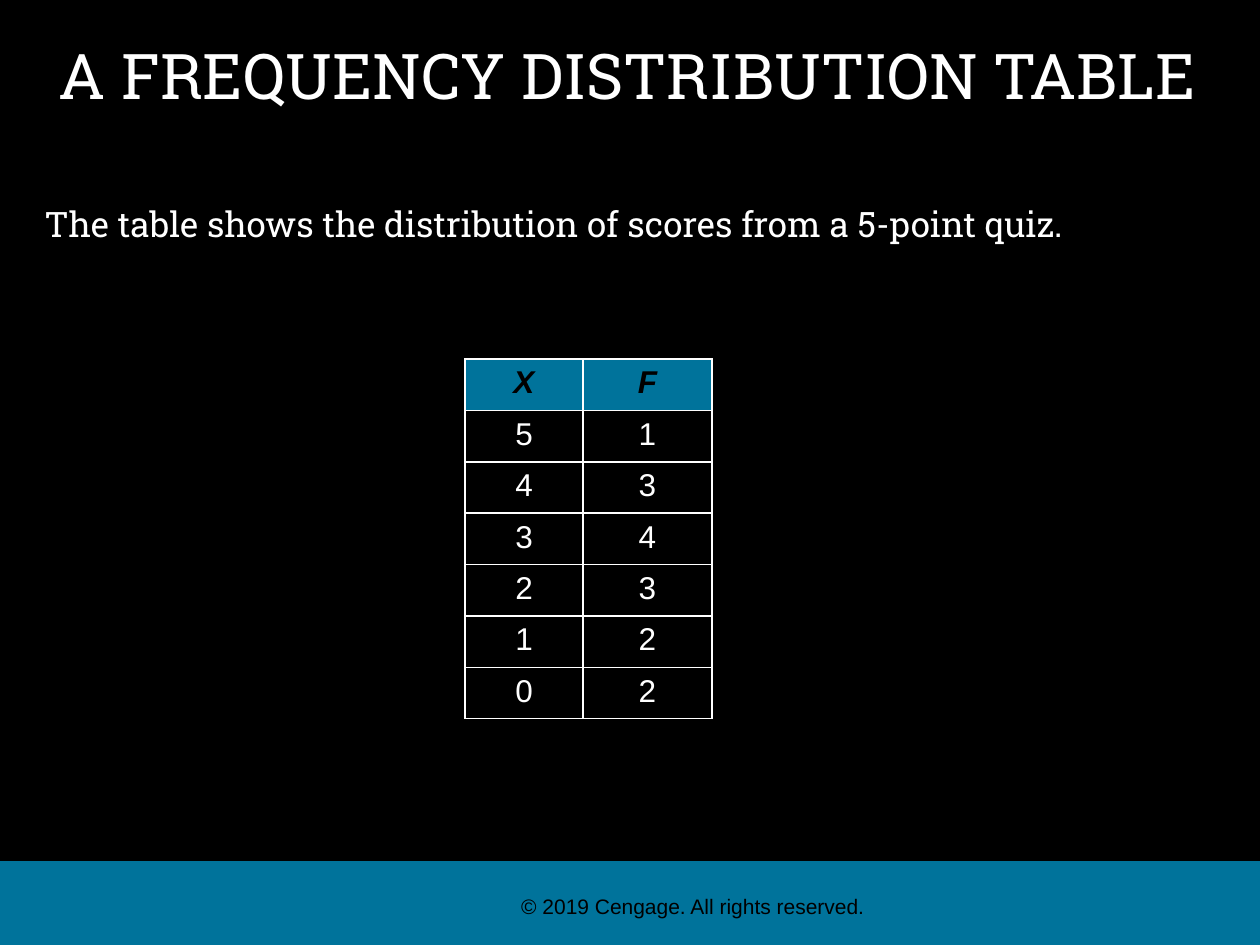
from lxml.etree import SubElement
from pptx import Presentation
from pptx.dml.color import RGBColor
from pptx.enum.shapes import MSO_SHAPE
from pptx.enum.text import MSO_ANCHOR, MSO_AUTO_SIZE, PP_ALIGN
from pptx.oxml.ns import qn
from pptx.util import Emu, Pt

COLORS = {"black": "000000", "blue": "00739B", "white": "FFFFFF"}
SCORES = [("X", "F"), (5, 1), (4, 3), (3, 4), (2, 3), (1, 2), (0, 2)]
COLUMN_WIDTHS = (118, 129)


def px(count):
    """Turn pixels into EMU."""
    return Emu(round(count * 914400 / 126))


def color(name):
    """Look up a named colour."""
    return RGBColor.from_string(COLORS[name])


def place(item, box):
    """Move an item into a left, top, width, height box."""
    item.left, item.top, item.width, item.height = map(px, box)


def write(para, text, font, size, ink, align=PP_ALIGN.CENTER, strong=False):
    """Add one formatted run to a paragraph."""
    para.alignment = align
    span = para.add_run()
    span.text = str(text)
    span.font.name, span.font.size = font, Pt(size)
    span.font.bold = span.font.italic = strong
    span.font.color.rgb = color(ink)


def add_bar(page, box):
    """Add a plain blue rectangle."""
    bar = page.shapes.add_shape(MSO_SHAPE.RECTANGLE, *map(px, box))
    bar.shadow.inherit = False
    bar.fill.solid()
    bar.fill.fore_color.rgb = color("blue")
    bar.line.fill.background()
    return bar


def add_footer(page, box):
    """Add the footer band and its copyright line."""
    left, top, width, height = box
    add_bar(page, box)
    frame = add_bar(page, (left + 211, top + 21, 966, 48)).text_frame
    frame.margin_left = frame.margin_right = 0
    frame.margin_top = frame.margin_bottom = 0
    frame.vertical_anchor = MSO_ANCHOR.MIDDLE
    write(frame.paragraphs[0], "© 2019 Cengage. All rights reserved.", "Arial", 12, "black")


def fill_title(page, box):
    """Fill the title placeholder."""
    title = page.shapes.title
    place(title, box)
    frame = title.text_frame
    frame.auto_size = MSO_AUTO_SIZE.NONE
    frame.vertical_anchor = MSO_ANCHOR.MIDDLE
    para = frame.paragraphs[0]
    para.line_spacing = 0.9
    write(para, "A FREQUENCY DISTRIBUTION TABLE", "Roboto Slab", 36, "white")


def fill_body(page, box):
    """Fill the body placeholder with one unbulleted line."""
    body = page.placeholders[1]
    place(body, box)
    body.text_frame.auto_size = MSO_AUTO_SIZE.NONE
    para = body.text_frame.paragraphs[0]
    properties = para._p.get_or_add_pPr()
    properties.set("marL", "0")
    properties.set("indent", "0")
    SubElement(properties, qn("a:buNone"))
    para.line_spacing, para.space_before = 1.2, Pt(0)
    write(para, "The table shows the distribution of scores from a 5-point quiz.",
          "Roboto Slab", 20, "white", PP_ALIGN.LEFT)


def add_borders(cell):
    """Draw a thin white border on each side of a cell."""
    properties = cell._tc.get_or_add_tcPr()
    for index, side in enumerate(("lnL", "lnR", "lnT", "lnB")):
        line = properties.makeelement(qn(f"a:{side}"), {"w": str(Pt(1))})
        fill = SubElement(line, qn("a:solidFill"))
        SubElement(fill, qn("a:srgbClr"), val=COLORS["white"])
        properties.insert(index, line)


def add_scores(page, box):
    """Add the frequency table."""
    table = page.shapes.add_table(len(SCORES), len(COLUMN_WIDTHS), *map(px, box)).table
    table.horz_banding = False
    for column, width in zip(table.columns, COLUMN_WIDTHS):
        column.width = px(width)
    for row, values in enumerate(SCORES):
        header = row == 0
        for column, value in enumerate(values):
            cell = table.cell(row, column)
            cell.fill.solid()
            cell.fill.fore_color.rgb = color("blue" if header else "black")
            add_borders(cell)
            write(cell.text_frame.paragraphs[0], value, "Arial", 18,
                  "black" if header else "white", strong=header)


def main():
    """Build and save the deck."""
    deck = Presentation()
    deck.slide_width, deck.slide_height = px(1260), px(945)
    page = deck.slides.add_slide(deck.slide_layouts[1])
    page.background.fill.solid()
    page.background.fill.fore_color.rgb = color("black")
    add_footer(page, (-1, 861, 1261, 85))
    fill_title(page, (19, 10, 1217, 139))
    fill_body(page, (32, 188, 1187, 131))
    add_scores(page, (465, 359, sum(COLUMN_WIDTHS), 360))
    deck.save("out.pptx")


if __name__ == "__main__":
    main()
